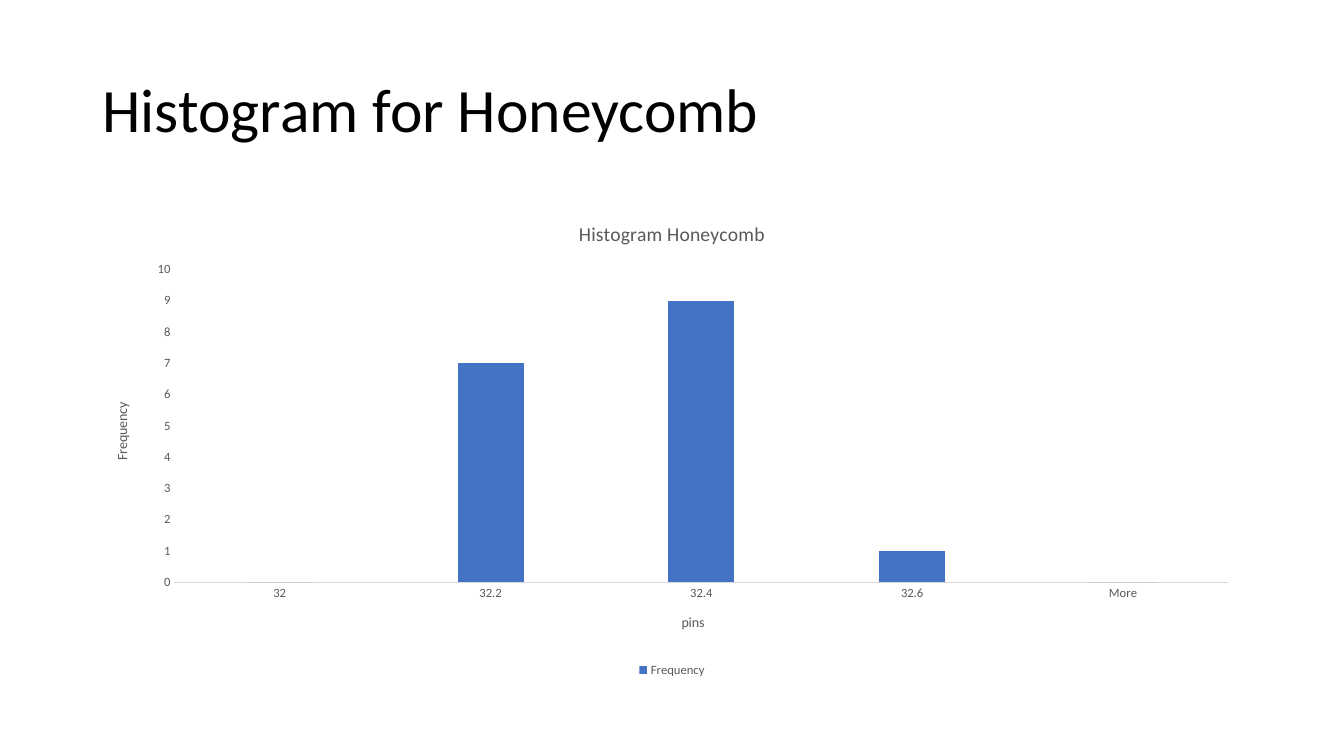
from pptx import Presentation
from pptx.chart.data import CategoryChartData
from pptx.dml.color import RGBColor
from pptx.enum.chart import XL_CHART_TYPE, XL_LEGEND_POSITION, XL_TICK_MARK
from pptx.enum.text import MSO_ANCHOR, MSO_AUTO_SIZE, PP_ALIGN
from pptx.util import Emu, Pt

COLUMNS = XL_CHART_TYPE.COLUMN_CLUSTERED
BOTTOM = XL_LEGEND_POSITION.BOTTOM
NO_TICK = XL_TICK_MARK.NONE
MIDDLE = MSO_ANCHOR.MIDDLE
NO_FIT = MSO_AUTO_SIZE.NONE
LEFT = PP_ALIGN.LEFT

BLACK = RGBColor(0x00, 0x00, 0x00)
GREY = RGBColor(0x59, 0x59, 0x59)
PALE = RGBColor(0xD9, 0xD9, 0xD9)
BLUE = RGBColor(0x44, 0x72, 0xC4)

FONT = "Calibri"
PX = 9525
PAGE_SIZE = (1280, 720)
TITLE_BOX = (88, 38, 1104, 139)
CHART_BOX = (88, 192, 1104, 457)

FREQUENCIES = {"32": 0, "32.2": 7, "32.4": 9, "32.6": 1, "More": 0}


def px(length):
    return Emu(length * PX)


def style_font(font, size, color):
    font.name = FONT
    font.size = Pt(size)
    font.bold = False
    font.color.rgb = color


def add_title(page, box, text):
    title = page.shapes.title
    title.left, title.top, title.width, title.height = map(px, box)
    frame = title.text_frame
    frame.text = text
    frame.word_wrap = True
    frame.auto_size = NO_FIT
    frame.vertical_anchor = MIDDLE
    para = frame.paragraphs[0]
    para.alignment = LEFT
    para.line_spacing = 0.9
    style_font(para.runs[0].font, 44, BLACK)


def set_heading(owner, text, size):
    frame = owner.text_frame
    frame.text = text
    style_font(frame.paragraphs[0].runs[0].font, size, GREY)


def style_axis(axis, heading):
    axis.has_major_gridlines = False
    axis.major_tick_mark = NO_TICK
    axis.minor_tick_mark = NO_TICK
    style_font(axis.tick_labels.font, 9, GREY)
    set_heading(axis.axis_title, heading, 10)


def add_histogram(page, box):
    data = CategoryChartData()
    data.categories = list(FREQUENCIES)
    data.add_series("Frequency", list(FREQUENCIES.values()))
    chart = page.shapes.add_chart(COLUMNS, *map(px, box), data).chart
    style_font(chart.font, 10, BLACK)
    set_heading(chart.chart_title, "Histogram Honeycomb", 14)
    chart.chart_title.include_in_layout = False

    style_axis(chart.category_axis, "pins")
    line = chart.category_axis.format.line
    line.color.rgb = PALE
    line.width = Pt(0.75)

    values = chart.value_axis
    style_axis(values, "Frequency")
    values.format.line.fill.background()
    values.minimum_scale = 0
    values.maximum_scale = 10
    values.major_unit = 1

    plot = chart.plots[0]
    plot.gap_width = 219
    plot.overlap = -27
    plot.vary_by_categories = False
    fill = plot.series[0].format.fill
    fill.solid()
    fill.fore_color.rgb = BLUE

    chart.has_legend = True
    chart.legend.position = BOTTOM
    chart.legend.include_in_layout = False
    style_font(chart.legend.font, 9, GREY)


def main():
    deck = Presentation()
    deck.slide_width, deck.slide_height = map(px, PAGE_SIZE)
    page = deck.slides.add_slide(deck.slide_layouts.get_by_name("Title Only"))
    add_title(page, TITLE_BOX, "Histogram for Honeycomb")
    add_histogram(page, CHART_BOX)
    deck.save("out.pptx")


if __name__ == "__main__":
    main()
